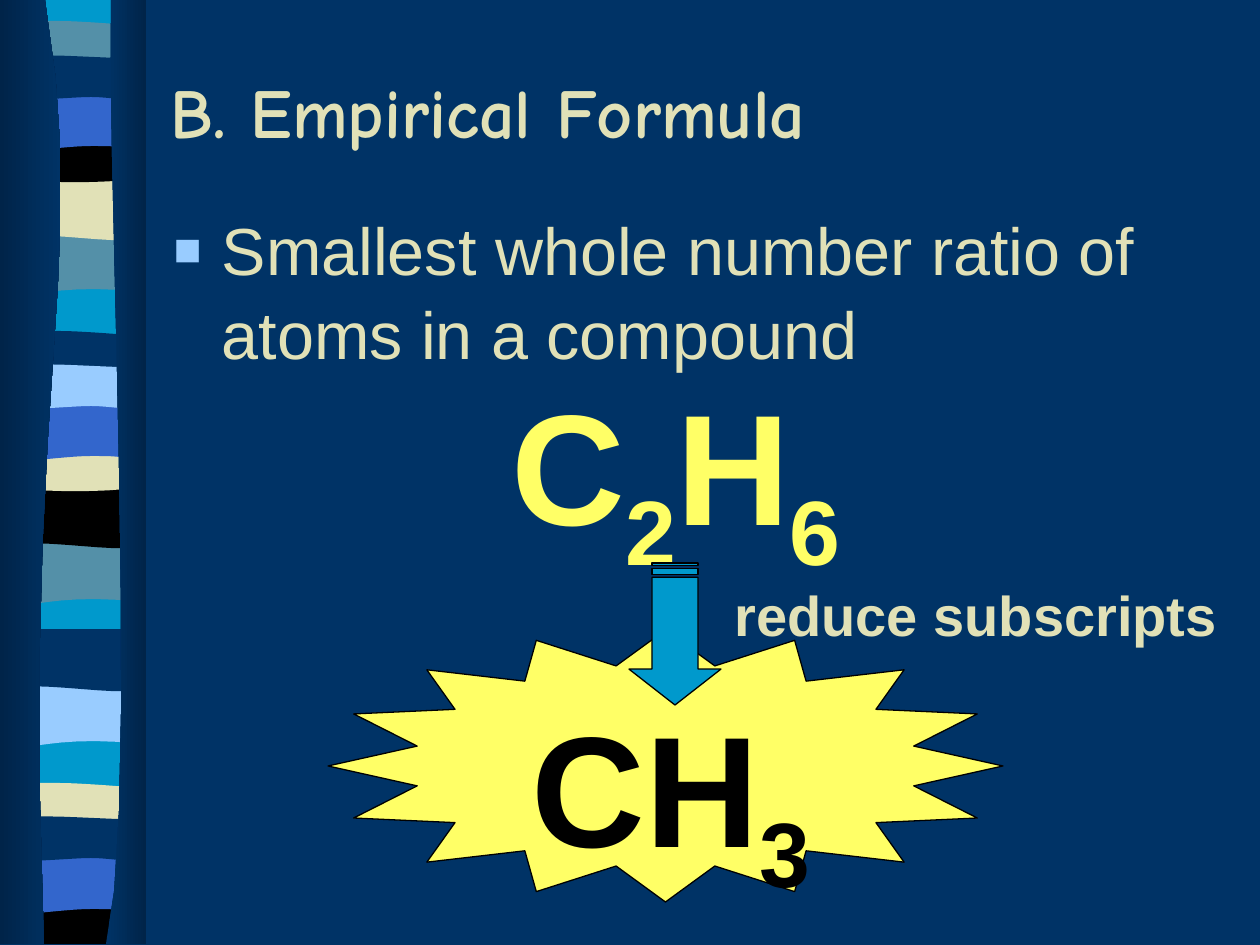
from dataclasses import dataclass

from lxml.etree import SubElement
from pptx import Presentation
from pptx.dml.color import RGBColor as Rgb
from pptx.enum.shapes import MSO_SHAPE as Kind
from pptx.enum.text import MSO_ANCHOR as Anchor, MSO_AUTO_SIZE as Fit, PP_ALIGN as Align
from pptx.oxml.ns import qn
from pptx.util import Pt

SCALE = 914400 / 126
STEPS = 10
HUES = {
    "navy": "003366", "night": "002449", "cyan": "0099CC", "teal": "5490A8",
    "cream": "E1E1B7", "blue": "3366CC", "sky": "99CCFF", "lemon": "FFFF66",
    "black": "000000",
}
LEFT, RIGHT = 6, 143


@dataclass
class Wave:
    low: list
    high: list


@dataclass
class Band:
    wave: str
    top: int
    hue: str


@dataclass
class Label:
    box: tuple
    words: list
    size: int
    hue: str
    align: Align
    lead: float


FLAT = [(LEFT, 0), (RIGHT, 0)]
WAVES = {
    "slant": Wave([(RIGHT, 59), (49, 49, 30, 69, LEFT, 59)], FLAT),
    "dip": Wave([(RIGHT, 59), (121, 69, 49, 52, LEFT, 59)], FLAT),
    "thin": Wave([(RIGHT, 30), (121, 36, 30, 36, LEFT, 30)],
                 [(LEFT, 0), (15, -6, 37, -5, 59, -5), (82, -5, 126, -1, RIGHT, 0)]),
    "bowl": Wave([(RIGHT, 41), (121, 48, 30, 48, LEFT, 41)],
                 [(LEFT, 0), (91, 6, 115, 0, RIGHT, 0)]),
    "arch": Wave([(RIGHT, 59), (122, 53, 113, 53, 91, 53), (68, 53, 28, 59, LEFT, 59)], FLAT),
    "roll": Wave([(RIGHT, 39), (135, 45, 113, 39, 91, 39), (68, 39, 21, 45, LEFT, 39)],
                 [(LEFT, 0), (26, -6, 100, 0, 122, 0), (RIGHT, 0)]),
    "base": Wave([(RIGHT, 47), (LEFT, 47)], [(LEFT, 0), (91, 6, 115, 0, RIGHT, 0)]),
    "back": Wave([(RIGHT, 942), (LEFT, 942)], FLAT),
}
BANDS = [
    Band("back", 0, "cyan"),
    Band("slant", 233, "teal"), Band("dip", 178, "cream"), Band("thin", 26, "teal"),
    Band("bowl", 136, "black"), Band("arch", 93, "blue"), Band("roll", 58, "navy"),
    Band("slant", 543, "teal"), Band("dip", 486, "black"), Band("thin", 336, "navy"),
    Band("bowl", 445, "cream"), Band("arch", 403, "blue"), Band("roll", 367, "sky"),
    Band("slant", 685, "sky"), Band("dip", 629, "navy"), Band("thin", 788, "cream"),
    Band("base", 897, "black"), Band("arch", 856, "blue"), Band("roll", 819, "navy"),
]
EDGES = [
    ([(45, 0), (91, 272, 21, 373, 44, 944), (0, 944), (0, 0)], ("night", "navy")),
    ([(111, 0), (106, 158, 140, 814, 106, 944), (146, 944), (146, 0)], ("navy", "night")),
]
FORMULA = Label((483, 345, 386, 219), ["C", "2", "H", "6"], 90, "lemon", Align.CENTER, 1.08)
RESULT = Label((478, 667, 386, 219), ["CH", "3"], 90, "black", Align.CENTER, 1.08)
NOTE = Label((722, 571, 538, 79), ["reduce subscripts"], 32, "cream", Align.LEFT, 1.05)


def emu(px: float) -> int:
    return round(px * SCALE)


def rgb(hue: str) -> Rgb:
    return Rgb.from_string(HUES[hue])


def trace(curve: list) -> list:
    dots = []
    for seg in curve:
        if len(seg) == 2:
            dots.append(seg)
            continue
        (a, b), (c, d, e, f, g, h) = dots[-1], seg
        for i in range(1, STEPS + 1):
            t = i / STEPS
            u = 1 - t
            k = (u ** 3, 3 * u * u * t, 3 * u * t * t, t ** 3)
            dots.append((k[0] * a + k[1] * c + k[2] * e + k[3] * g,
                         k[0] * b + k[1] * d + k[2] * f + k[3] * h))
    return dots


def draw(shapes, curve: list, top: int = 0):
    dots = [(emu(x), emu(y + top)) for x, y in trace(curve)]
    pen = shapes.build_freeform(*dots[0], scale=1.0)
    pen.add_line_segments(dots[1:], close=True)
    shape = pen.convert_to_shape()
    shape.shadow.inherit = False
    shape.line.fill.background()
    return shape


def stripe(shapes, band: Band) -> None:
    wave = WAVES[band.wave]
    shape = draw(shapes, wave.low + wave.high, band.top)
    shape.fill.solid()
    shape.fill.fore_color.rgb = rgb(band.hue)


def shade(shapes, curve: list, hues: tuple) -> None:
    fill = draw(shapes, curve).fill
    fill.gradient()
    fill.gradient_angle = 0
    for stop, hue in zip(fill.gradient_stops, hues):
        stop.color.rgb = rgb(hue)


def style(para, name: str, size: int, hue: str, bold: bool) -> None:
    font = para.font
    font.name, font.size, font.bold = name, Pt(size), bold
    font.color.rgb = rgb(hue)


def write(shapes, label: Label) -> None:
    frame = shapes.add_textbox(*map(emu, label.box)).text_frame
    frame.word_wrap = True
    para = frame.paragraphs[0]
    para.alignment, para.line_spacing = label.align, label.lead
    style(para, "Arial", label.size, label.hue, True)
    for word in label.words:
        run = para.add_run()
        run.text = word
        if word.isdigit():
            run._r.get_or_add_rPr().set("baseline", "-25000")


def stamp(shapes, kind: Kind, box: tuple, hue: str, tune: list, turn: int = 0) -> None:
    shape = shapes.add_shape(kind, *map(emu, box))
    shape.shadow.inherit = False
    shape.rotation = turn
    for i, val in enumerate(tune):
        shape.adjustments[i] = val
    shape.fill.solid()
    shape.fill.fore_color.rgb = rgb(hue)
    shape.line.color.rgb = rgb("black")
    shape.line.width = Pt(0.75)


def place(holder, box: tuple, text: str):
    holder.left, holder.top, holder.width, holder.height = map(emu, box)
    frame = holder.text_frame
    frame.auto_size = Fit.NONE
    frame.text = text
    para = frame.paragraphs[0]
    para.alignment = Align.LEFT
    return frame, para


def mark(para) -> None:
    props = para._p.get_or_add_pPr()
    props.set("marL", str(emu(48)))
    props.set("indent", str(emu(-48)))
    tint = SubElement(props, qn("a:buClr"))
    SubElement(tint, qn("a:srgbClr")).set("val", HUES["sky"])
    SubElement(props, qn("a:buSzPct")).set("val", "70000")
    SubElement(props, qn("a:buFont")).set("typeface", "Arial")
    SubElement(props, qn("a:buChar")).set("char", "■")


def main() -> None:
    deck = Presentation()
    deck.slide_width, deck.slide_height = emu(1260), emu(945)
    slide = deck.slides.add_slide(deck.slide_layouts[1])
    slide.background.fill.solid()
    slide.background.fill.fore_color.rgb = rgb("navy")
    shapes = slide.shapes
    for band in BANDS:
        stripe(shapes, band)
    for curve, hues in EDGES:
        shade(shapes, curve, hues)

    frame, para = place(shapes.title, (158, 32, 1102, 189 - 32), "B. Empirical Formula")
    frame.vertical_anchor = Anchor.MIDDLE
    style(para, "Comic Neue", 40, "cream", True)
    frame, para = place(slide.placeholders[1], (161, 199, 1071, 193),
                        "Smallest whole number ratio of atoms in a compound")
    mark(para)
    para.line_spacing, para.space_before = 1.05, Pt(2)
    style(para, "Arial", 38, "cream", False)

    write(shapes, FORMULA)
    stamp(shapes, Kind.STAR_16_POINT, (328, 630, 675, 272), "lemon", [0.375])
    write(shapes, RESULT)
    stamp(shapes, Kind.STRIPED_RIGHT_ARROW, (604, 588, 142, 92), "cyan", [0.5, 0.39], 90)
    write(shapes, NOTE)
    deck.save("out.pptx")


if __name__ == "__main__":
    main()
